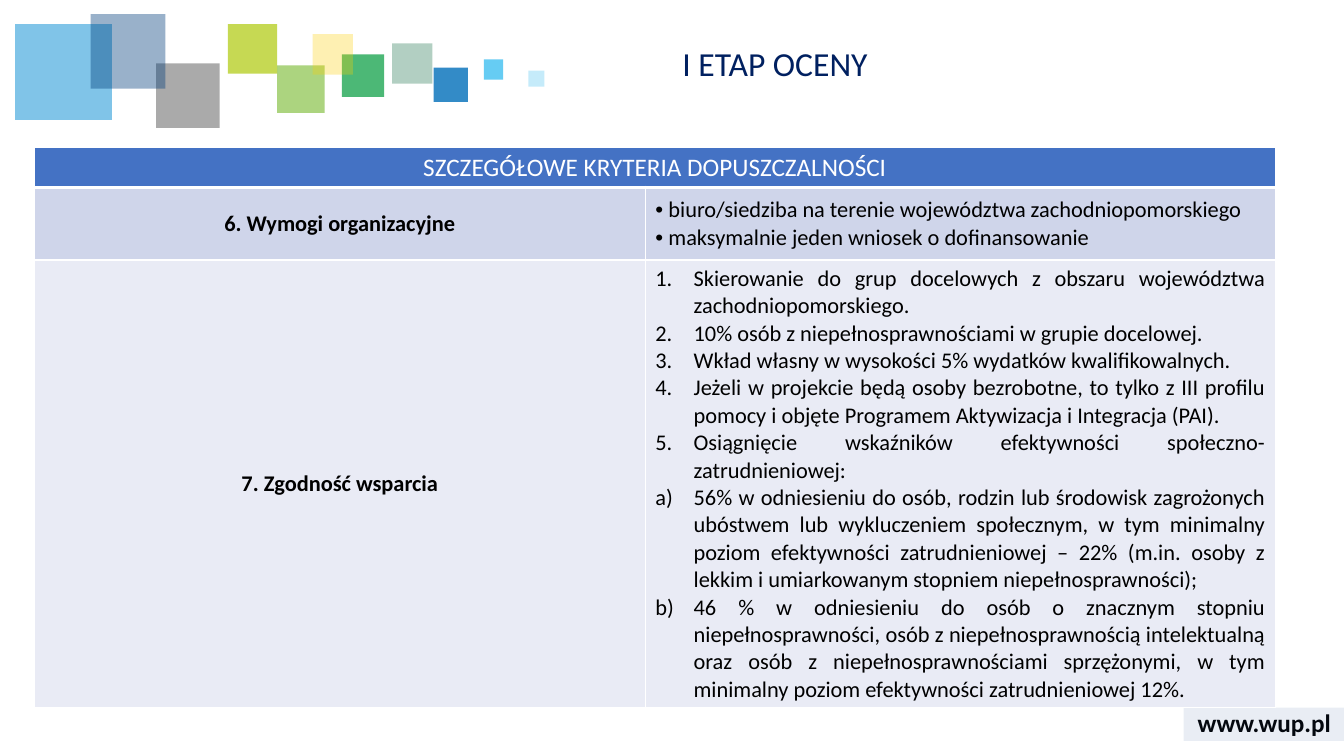
from dataclasses import dataclass

from lxml.etree import SubElement
from pptx import Presentation
from pptx.dml.color import RGBColor
from pptx.enum.shapes import MSO_SHAPE
from pptx.enum.text import MSO_ANCHOR, PP_ALIGN
from pptx.oxml.ns import qn
from pptx.util import Inches, Pt


@dataclass(frozen=True)
class Theme:
    font: str = "Calibri"
    title_size: int = 24
    header_size: int = 18
    body_size: int = 16
    title: str = "002060"
    text: str = "000000"
    white: str = "FFFFFF"
    header_fill: str = "4472C4"
    band_fills: tuple = ("CFD5EA", "E9EBF5")
    footer_fill: str = "2F5597"


THEME = Theme()

# left, top, width, height, colour, opacity in percent
SQUARES = [
    (3.89, 0.43, 0.4, 0.4, "006138", 30),
    (4.3, 0.67, 0.34, 0.34, "006EB9", 80),
    (3.39, 0.54, 0.42, 0.42, "009A3C", 70),
    (0.15, 0.24, 0.96, 0.95, "028BD3", 50),
    (2.75, 0.65, 0.47, 0.47, "75B82A", 60),
    (1.55, 0.63, 0.63, 0.64, "575757", 50),
    (0.9, 0.14, 0.74, 0.74, "003D7C", 40),
    (4.8, 0.59, 0.19, 0.2, "40C0F1", 80),
    (2.26, 0.24, 0.49, 0.49, "AFCA0B", 70),
    (3.1, 0.34, 0.4, 0.4, "FED000", 30),
    (5.24, 0.7, 0.16, 0.16, "40C0F1", 30),
]

ORGANISATION = [
    "biuro/siedziba na terenie województwa zachodniopomorskiego",
    "maksymalnie jeden wniosek o dofinansowanie",
]
SUPPORT = [
    "Skierowanie do grup docelowych z obszaru województwa zachodniopomorskiego.",
    "10% osób z niepełnosprawnościami w grupie docelowej.",
    "Wkład własny w wysokości 5% wydatków kwalifikowalnych.",
    "Jeżeli w projekcie będą osoby bezrobotne, to tylko z III profilu pomocy "
    "i objęte Programem Aktywizacja i Integracja (PAI).",
    "Osiągnięcie wskaźników efektywności społeczno-zatrudnieniowej:",
]
INDICATORS = [
    "56% w odniesieniu do osób, rodzin lub środowisk zagrożonych ubóstwem lub "
    "wykluczeniem społecznym, w tym minimalny poziom efektywności zatrudnieniowej "
    "– 22% (m.in. osoby z lekkim i umiarkowanym stopniem niepełnosprawności);",
    "46 % w odniesieniu do osób o znacznym stopniu niepełnosprawności, osób "
    "z niepełnosprawnością intelektualną oraz osób z niepełnosprawnościami "
    "sprzężonymi, w tym minimalny poziom efektywności zatrudnieniowej 12%.",
]

# text, bullet tag, bullet attributes, hanging indent, alignment
BULLET = ("buChar", {"char": "•"}, 0.13, PP_ALIGN.LEFT)
NUMBER = ("buAutoNum", {"type": "arabicPeriod"}, 0.38, PP_ALIGN.JUSTIFY)
LETTER = ("buAutoNum", {"type": "alphaLcParenR"}, 0.38, PP_ALIGN.JUSTIFY)


def add_span(para, text, size, color, bold=False):
    span = para.add_run()
    span.text = text
    span.font.name = THEME.font
    span.font.size = Pt(size)
    span.font.bold = bold
    span.font.color.rgb = RGBColor.from_string(color)


def add_rectangle(page, left, top, width, height, color, opacity):
    box = page.shapes.add_shape(MSO_SHAPE.RECTANGLE, Inches(left), Inches(top),
                                Inches(width), Inches(height))
    box.shadow.inherit = False
    box.line.fill.background()
    box.fill.solid()
    box.fill.fore_color.rgb = RGBColor.from_string(color)
    tint = box.fill._xPr.find(qn("a:solidFill"))[0]
    SubElement(tint, qn("a:alpha"), val=str(opacity * 1000))


def add_label(page, left, top, width, height):
    """Add an empty text box and return its frame."""
    box = page.shapes.add_textbox(Inches(left), Inches(top), Inches(width), Inches(height))
    box.text_frame.word_wrap = True
    return box.text_frame


def add_title(page, left, top, width, height):
    para = add_label(page, left, top, width, height).paragraphs[0]
    para.line_spacing = 0.9
    add_span(para, "I ETAP OCENY", THEME.title_size, THEME.title)


def add_footer(page, left, top, width, height):
    frame = add_label(page, left, top, width, height)
    frame.vertical_anchor = MSO_ANCHOR.MIDDLE
    para = frame.paragraphs[0]
    para.alignment = PP_ALIGN.CENTER
    add_span(para, "www.wup.pl", THEME.header_size, THEME.text, bold=True)


def style_cell(cell, fill, bottom=1):
    properties = cell._tc.get_or_add_tcPr()
    for side, width in (("L", 1), ("R", 1), ("T", 1), ("B", bottom)):
        line = SubElement(properties, qn(f"a:ln{side}"), w=str(Pt(width)))
        solid = SubElement(line, qn("a:solidFill"))
        SubElement(solid, qn("a:srgbClr"), val=THEME.white)
    cell.fill.solid()
    cell.fill.fore_color.rgb = RGBColor.from_string(fill)


def fill_heading(cell, text, size, color, bold):
    para = cell.text_frame.paragraphs[0]
    para.alignment = PP_ALIGN.CENTER
    add_span(para, text, size, color, bold)


def fill_list(cell, groups):
    """Write each (items, list style) group as bulleted paragraphs."""
    frame = cell.text_frame
    entries = [(item, style) for items, style in groups for item in items]
    for index, (item, (tag, attributes, indent, alignment)) in enumerate(entries):
        para = frame.add_paragraph() if index else frame.paragraphs[0]
        para.alignment = alignment
        properties = para._p.get_or_add_pPr()
        properties.set("marL", str(Inches(indent)))
        properties.set("indent", str(-Inches(indent)))
        SubElement(properties, qn("a:buFont"), typeface="Arial" if tag == "buChar" else "+mj-lt")
        SubElement(properties, qn(f"a:{tag}"), attributes)
        add_span(para, item, THEME.body_size, THEME.text)


def add_criteria_table(page, left, top, width, height):
    criteria = [
        ("6. Wymogi organizacyjne", [(ORGANISATION, BULLET)]),
        ("7. Zgodność wsparcia", [(SUPPORT, NUMBER), (INDICATORS, LETTER)]),
    ]
    table = page.shapes.add_table(len(criteria) + 1, 2, Inches(left), Inches(top),
                                  Inches(width), Inches(height)).table
    table.first_row = table.horz_banding = False
    label_width, heights = 6.06, (0.4, 0.72)
    table.columns[0].width = Inches(label_width)
    table.columns[1].width = Inches(width - label_width)
    for row, row_height in zip(table.rows, (*heights, height - sum(heights))):
        row.height = Inches(row_height)

    header = table.cell(0, 0)
    header.merge(table.cell(0, 1))
    for column in range(2):
        style_cell(table.cell(0, column), THEME.header_fill, bottom=3)
    fill_heading(header, "SZCZEGÓŁOWE KRYTERIA DOPUSZCZALNOŚCI",
                 THEME.header_size, THEME.white, False)

    for row, ((name, groups), fill) in enumerate(zip(criteria, THEME.band_fills), start=1):
        label, details = table.cell(row, 0), table.cell(row, 1)
        for cell in (label, details):
            style_cell(cell, fill)
            cell.vertical_anchor = MSO_ANCHOR.MIDDLE
        fill_heading(label, name, THEME.body_size, THEME.text, True)
        fill_list(details, groups)


def main():
    deck = Presentation()
    deck.slide_width, deck.slide_height = Inches(13.33), Inches(7.5)
    page = deck.slides.add_slide(deck.slide_layouts[6])
    add_footer(page, 11.74, 6.97, 1.6, 0.4)
    for square in SQUARES:
        add_rectangle(page, *square)
    add_rectangle(page, 11.74, 7.02, 1.6, 0.33, THEME.footer_fill, 10)
    add_title(page, 6.67, 0.42, 6.36, 0.55)
    add_criteria_table(page, 0.34, 1.46, 12.31, 5.56)
    deck.save("out.pptx")


if __name__ == "__main__":
    main()
